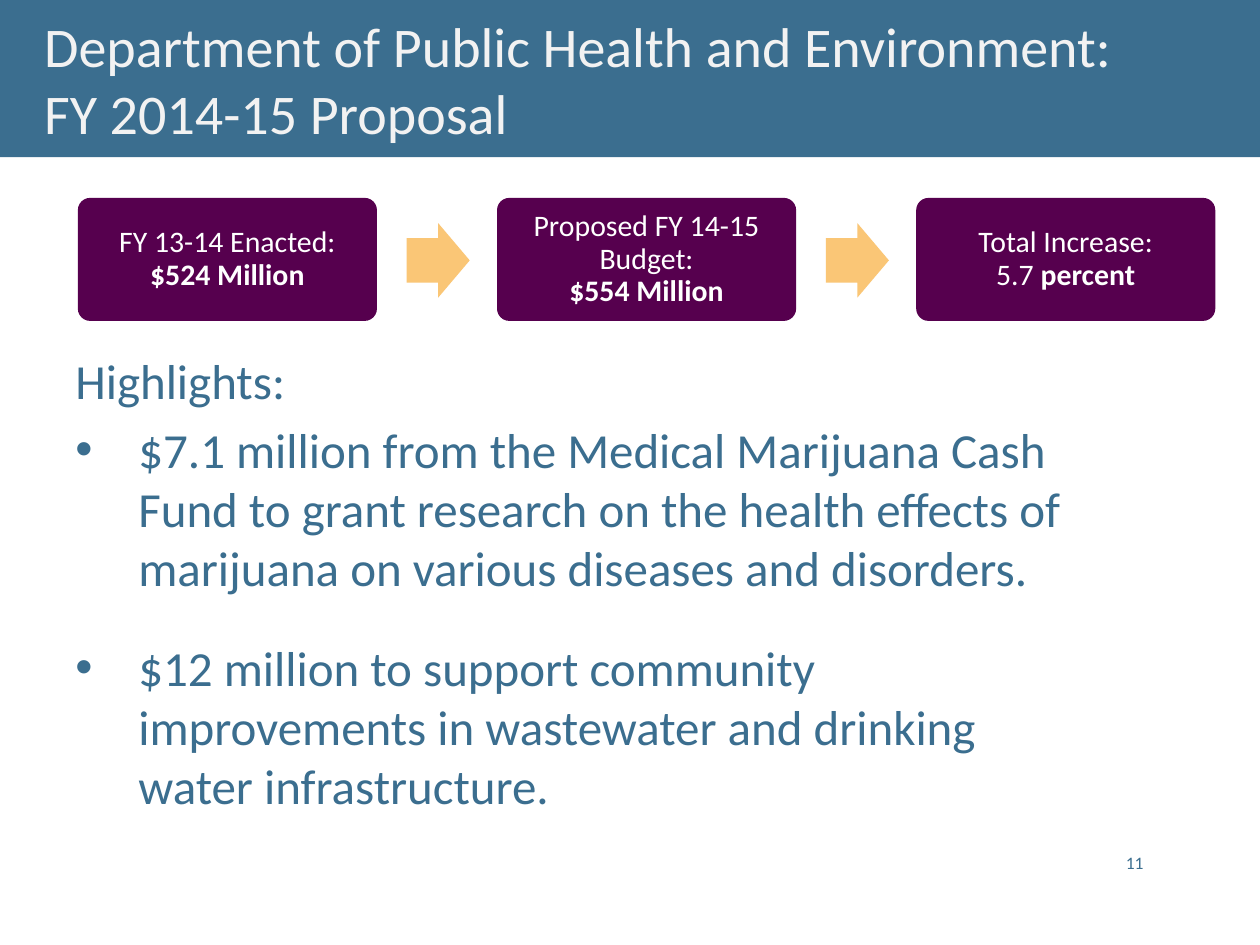
import pptx
import pptx.dml.color
import pptx.enum.shapes
import pptx.enum.text
import pptx.util
from lxml import etree
from pptx.oxml.ns import qn

Cm, Pt = pptx.util.Cm, pptx.util.Pt
SHAPE = pptx.enum.shapes.MSO_SHAPE
ALIGN = pptx.enum.text.PP_ALIGN
ANCHOR = pptx.enum.text.MSO_ANCHOR

COLORS = {
    "blue": "3B6E8F",
    "plum": "56004E",
    "gold": "FAC676",
    "pale": "F2F2F2",
    "white": "FFFFFF",
}
STEPS = [
    ("FY 13-14 Enacted:\n", "$524 Million"),
    ("Proposed FY 14-15 Budget:\n", "$554 Million"),
    ("Total Increase:\n5.7", " percent"),
]
POINTS = [
    "$7.1 million from the Medical Marijuana Cash Fund to grant research "
    "on the health effects of marijuana on various diseases and disorders.",
    "$12 million to support community improvements in wastewater and "
    "drinking water infrastructure.",
]


def color(name):
    return pptx.dml.color.RGBColor.from_string(COLORS[name])


def style(para, size, ink):
    for run in para.runs:
        run.font.name = "Calibri"
        run.font.size = Pt(size)
        run.font.color.rgb = color(ink)


def add_shape(slide, kind, left, top, width, height, fill, adjust=()):
    shape = slide.shapes.add_shape(
        kind, Cm(left), Cm(top), Cm(width), Cm(height))
    shape.shadow.inherit = False
    shape.fill.solid()
    shape.fill.fore_color.rgb = color(fill)
    shape.line.fill.background()
    for i, value in enumerate(adjust):
        shape.adjustments[i] = value
    return shape


def add_text(slide, left, top, width, height, text, size, ink):
    box = slide.shapes.add_textbox(Cm(left), Cm(top), Cm(width), Cm(height))
    frame = box.text_frame
    frame.word_wrap = True
    para = frame.paragraphs[0]
    para.text = text
    style(para, size, ink)
    return frame


def add_step(slide, left, label, value):
    """Draw one rounded box with a plain label and a bold value."""
    box = add_shape(slide, SHAPE.ROUNDED_RECTANGLE, left, 3.99, 6.03, 2.48,
                    "plum", [0.1])
    frame = box.text_frame
    frame.word_wrap = True
    frame.vertical_anchor = ANCHOR.MIDDLE
    frame.margin_left = frame.margin_right = Cm(0.25)
    frame.margin_top = frame.margin_bottom = Cm(0.25)
    para = frame.paragraphs[0]
    para.text = label
    run = para.add_run()
    run.text = value
    run.font.bold = True
    para.alignment = ALIGN.CENTER
    para.line_spacing = 0.9
    style(para, 17, "white")


def add_flow(slide):
    first, pitch = 1.57, 8.45
    for i, (label, value) in enumerate(STEPS):
        left = first + i * pitch
        if i:
            add_shape(slide, SHAPE.RIGHT_ARROW, left - 1.82, 4.5, 1.27, 1.5,
                      "gold", [0.6, 0.5])
        add_step(slide, left, label, value)


def add_bullet(frame, text):
    para = frame.add_paragraph()
    para.text = text
    props = para._p.get_or_add_pPr()
    props.set("marL", str(Cm(1.27)))
    props.set("indent", str(-Cm(1.27)))
    etree.SubElement(props, qn("a:buFont"), typeface="Arial")
    etree.SubElement(props, qn("a:buChar"), char="•")
    para.space_before = Pt(5.6)
    style(para, 28, "blue")
    return para


def main():
    deck = pptx.Presentation()
    deck.slide_width, deck.slide_height = Cm(25.4), Cm(19.05)
    slide = deck.slides.add_slide(deck.slide_layouts[6])

    add_shape(slide, SHAPE.RECTANGLE, 0, 0, 25.4, 3.17, "blue")
    add_text(slide, 0.64, 0.1, 23.5, 3,
             "Department of Public Health and Environment:\n"
             "FY 2014-15 Proposal", 32, "pale")
    add_flow(slide)

    body = add_text(slide, 1.27, 6.95, 21, 12, "Highlights:", 28, "blue")
    bullets = [add_bullet(body, point) for point in POINTS]
    bullets[0].space_after = Pt(18)

    number = add_text(slide, 22.28, 16.71, 1.02, 1.02, "11", 10, "blue")
    number.vertical_anchor = ANCHOR.BOTTOM
    number.paragraphs[0].alignment = ALIGN.RIGHT

    deck.save("out.pptx")


if __name__ == "__main__":
    main()
